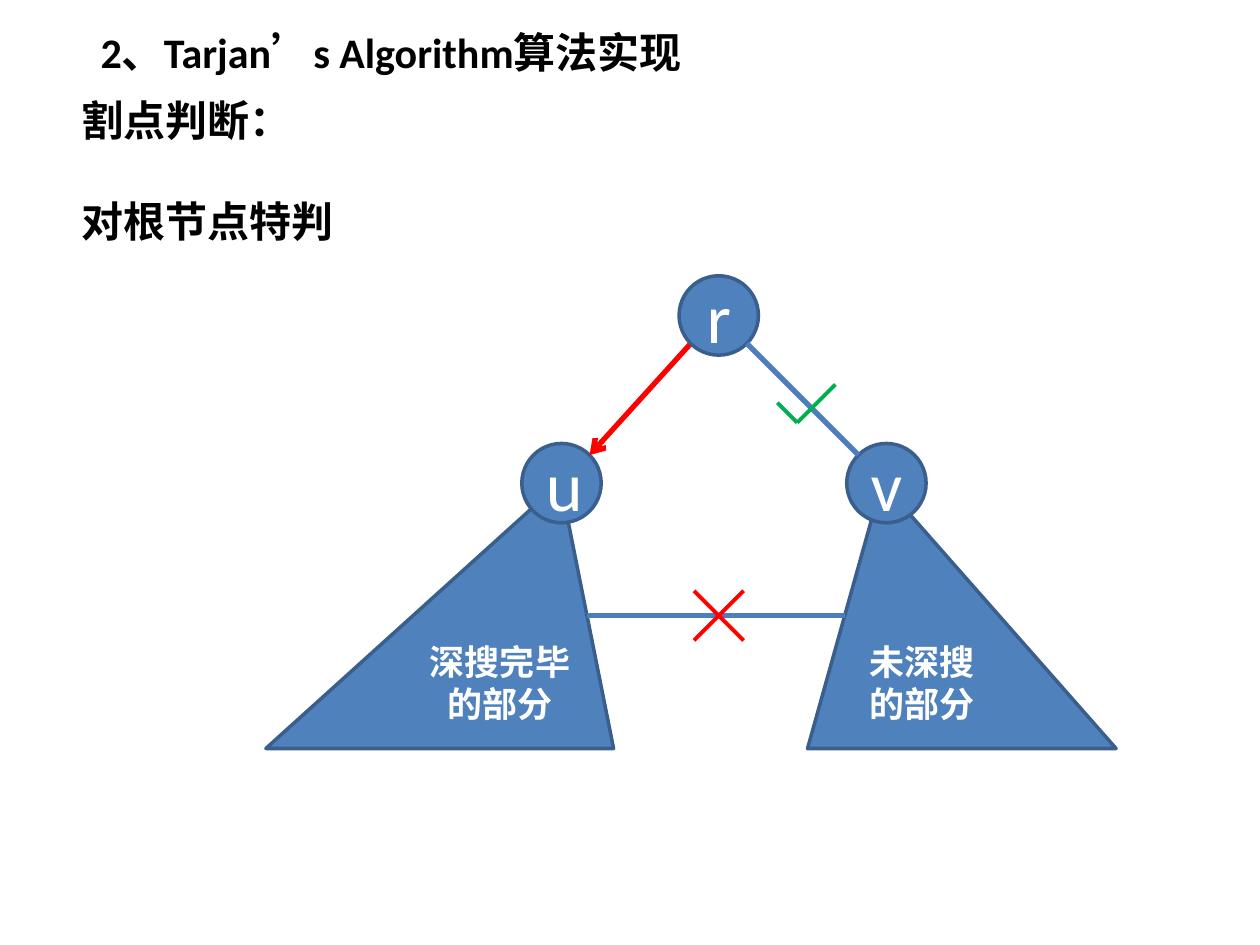
from dataclasses import dataclass
import math

import lxml.etree
import pptx
import pptx.dml.color
import pptx.enum.shapes
import pptx.enum.text
import pptx.oxml.ns
import pptx.util

Cm = pptx.util.Cm
SHAPES = pptx.enum.shapes.MSO_SHAPE
ALIGN = pptx.enum.text.PP_ALIGN


@dataclass(frozen=True)
class Theme:
    font: str = "Calibri"
    black: str = "000000"
    white: str = "FFFFFF"
    fill: str = "4F81BD"
    outline: str = "3A5F8C"
    edge: str = "4B7EBC"
    red: str = "FF0000"
    green: str = "00B050"
    heading_size: float = 24
    tree_size: float = 20
    node_size: float = 40
    outline_width: float = 2
    edge_width: float = 3
    mark_width: float = 2.25


THEME = Theme()
NODE_RADIUS = 0.8
TREE_TOP, TREE_HEIGHT = 9.73, 5.36


def rgb(color):
    return pptx.dml.color.RGBColor.from_string(color)


def write_text(paragraph, text, *, size, color, bold=False, align=None, space_before=0):
    paragraph.alignment = align
    paragraph.space_before = pptx.util.Pt(space_before)
    run = paragraph.add_run()
    run.text = text
    run.font.name = THEME.font
    run.font.size = pptx.util.Pt(size)
    run.font.bold = bold
    run.font.color.rgb = rgb(color)


def add_heading(slide, left, top, width, height, lines, gap=0):
    frame = slide.shapes.add_textbox(Cm(left), Cm(top), Cm(width), Cm(height)).text_frame
    frame.word_wrap = True
    for index, line in enumerate(lines):
        paragraph = frame.add_paragraph() if index else frame.paragraphs[0]
        write_text(paragraph, line, size=THEME.heading_size, color=THEME.black,
                   bold=True, space_before=gap if index else 0)


def add_labelled_shape(slide, kind, left, top, width, height, label, size, bold=False):
    shape = slide.shapes.add_shape(kind, Cm(left), Cm(top), Cm(width), Cm(height))
    shape.shadow.inherit = False
    shape.fill.solid()
    shape.fill.fore_color.rgb = rgb(THEME.fill)
    shape.line.color.rgb = rgb(THEME.outline)
    shape.line.width = pptx.util.Pt(THEME.outline_width)
    shape.text_frame.vertical_anchor = pptx.enum.text.MSO_ANCHOR.MIDDLE
    write_text(shape.text_frame.paragraphs[0], label, size=size, color=THEME.white,
               bold=bold, align=ALIGN.CENTER)
    return shape


def add_node(slide, center, label):
    x, y = center
    add_labelled_shape(slide, SHAPES.OVAL, x - NODE_RADIUS, y - NODE_RADIUS,
                       2 * NODE_RADIUS, 2 * NODE_RADIUS, label, THEME.node_size)


def add_subtree(slide, left, width, apex, label):
    shape = add_labelled_shape(slide, SHAPES.ISOSCELES_TRIANGLE, left, TREE_TOP, width,
                               TREE_HEIGHT, label, THEME.tree_size, bold=True)
    shape.adjustments[0] = apex


def add_line(shapes, start, end, color, width, arrow=False):
    connector = shapes.add_connector(pptx.enum.shapes.MSO_CONNECTOR.STRAIGHT,
                                     *(Cm(value) for value in (*start, *end)))
    connector.line.color.rgb = rgb(color)
    connector.line.width = pptx.util.Pt(width)
    if arrow:
        lxml.etree.SubElement(connector.line._get_or_add_ln(),
                              pptx.oxml.ns.qn("a:tailEnd"), type="arrow")
    lxml.etree.SubElement(connector._element.spPr, pptx.oxml.ns.qn("a:effectLst"))


def add_mark(slide, strokes, color):
    group = slide.shapes.add_group_shape()
    for start, end in strokes:
        add_line(group.shapes, start, end, color, THEME.mark_width)


def diagonal_point(center, horizontal, vertical):
    offset = NODE_RADIUS / math.sqrt(2)
    return center[0] + horizontal * offset, center[1] + vertical * offset


def main():
    presentation = pptx.Presentation()
    presentation.slide_width, presentation.slide_height = Cm(25.4), Cm(19.05)
    slide = presentation.slides.add_slide(presentation.slide_layouts[6])

    root, visited, unvisited = (14.49, 6.36), (11.32, 9.74), (17.87, 9.74)
    add_subtree(slide, 5.36, 7.01, 0.847, "深搜完毕的部分")
    add_subtree(slide, 16.28, 6.22, 0.241, "未深搜的部分")
    add_node(slide, visited, "u")
    add_node(slide, unvisited, "v")

    add_heading(slide, 1.78, 0.41, 18.06, 1.27, ["2、Tarjan’s Algorithm算法实现"])
    add_heading(slide, 1.4, 1.78, 7.54, 3.33, ["割点判断：", "对根节点特判"], gap=29)

    add_line(slide.shapes, diagonal_point(root, -1, 1), diagonal_point(visited, 1, -1),
             THEME.red, THEME.edge_width, arrow=True)
    add_node(slide, root, "r")

    middle = TREE_TOP + TREE_HEIGHT / 2
    add_line(slide.shapes, (17.03, middle), (11.83, middle), THEME.edge, THEME.edge_width)
    x, reach = root[0], 0.5
    add_mark(slide, [((x - reach, middle - side * reach), (x + reach, middle + side * reach))
                     for side in (1, -1)], THEME.red)

    add_line(slide.shapes, diagonal_point(unvisited, -1, -1), diagonal_point(root, 1, 1),
             THEME.edge, THEME.edge_width)
    corner = (16.07, 8.52)
    add_mark(slide, [((15.67, 8.12), corner), (corner, (16.84, 7.75))], THEME.green)

    presentation.save("out.pptx")


if __name__ == "__main__":
    main()
